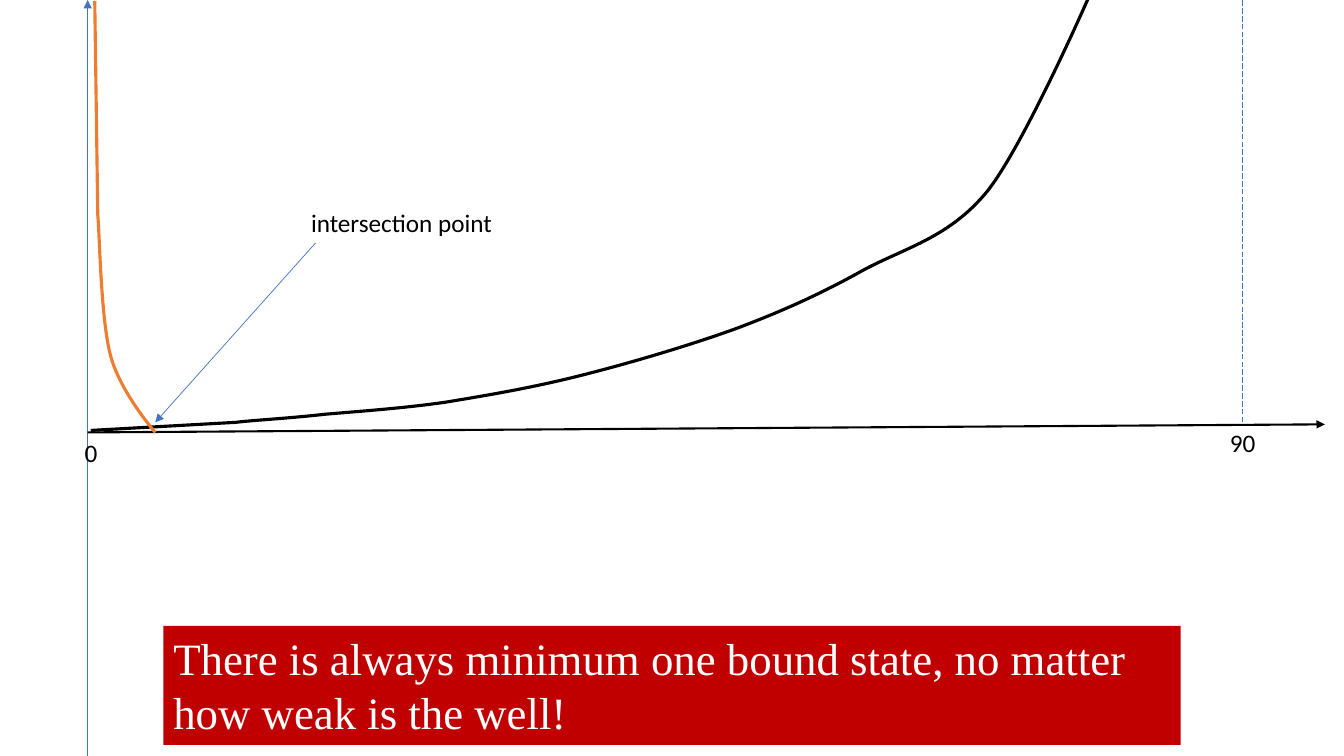
from dataclasses import dataclass
from typing import Optional

from lxml import etree
from pptx import Presentation
from pptx.dml.color import RGBColor
from pptx.enum.dml import MSO_LINE
from pptx.enum.shapes import MSO_CONNECTOR, MSO_SHAPE
from pptx.enum.text import MSO_ANCHOR, MSO_AUTO_SIZE, PP_ALIGN
from pptx.oxml.ns import qn
from pptx.util import Inches, Pt

STRAIGHT = MSO_CONNECTOR.STRAIGHT
RECTANGLE = MSO_SHAPE.RECTANGLE
LONG_DASH = MSO_LINE.LONG_DASH
FIT_SHAPE = MSO_AUTO_SIZE.SHAPE_TO_FIT_TEXT
TOP = MSO_ANCHOR.TOP
LEFT = PP_ALIGN.LEFT
COLORS = {"blue": "4472C4", "black": "000000", "orange": "ED7D31",
          "red": "C00000", "white": "FFFFFF"}
Point = tuple[float, float]


@dataclass
class Line:
    start: Point
    end: Point
    color: str = "blue"
    weight: float = 0.5
    arrow: bool = True
    dash: Optional[MSO_LINE] = None


@dataclass
class Curve:
    """A start point, then two control points and an end point per segment."""
    color: str
    points: list[Point]


@dataclass
class Label:
    text: str
    left: float
    top: float
    width: float
    height: float = 0.4
    font: str = "Calibri"
    size: int = 18
    color: str = "black"
    fill: Optional[str] = None


LINES = [
    Line((0.87, 7.5), (0.87, 0)),
    Line((0.87, 4.29), (13.14, 4.21), "black", 1.5),
    Line((12.32, 4.19), (12.32, 0), arrow=False, dash=LONG_DASH),
    Line((3.13, 2.41), (1.54, 4.19)),
]
CURVES = [
    Curve("black", [
        (0.9, 4.27), (0.9, 4.27), (2.34, 4.19), (2.34, 4.19),
        (2.49, 4.17), (2.87, 4.15), (3.22, 4.11),
        (3.57, 4.08), (4, 4.05), (4.42, 3.99),
        (4.84, 3.92), (5.26, 3.85), (5.74, 3.73),
        (6.22, 3.61), (6.83, 3.43), (7.3, 3.26),
        (7.78, 3.08), (8.17, 2.9), (8.58, 2.67),
        (9, 2.45), (9.42, 2.35), (9.79, 1.9),
        (10.15, 1.45), (10.79, -0.01), (10.79, -0.01)]),
    Curve("orange", [
        (0.94, 0.01), (0.94, 0.01), (0.97, 2.13), (0.97, 2.13),
        (0.99, 2.36), (1, 3.18), (1.1, 3.54),
        (1.2, 3.9), (1.54, 4.29), (1.54, 4.29)]),
]
LABELS = [
    Label("0", 0.74, 4.29, 0.33),
    Label("90", 12.1, 4.19, 0.46),
    Label(" intersection point", 2.93, 2.01, 2.08),
    Label("There is always minimum one bound state, no matter how weak is the well!",
          1.62, 6.21, 10.09, 1.18, "Times New Roman", 32, "white", "red"),
]


def rgb(name: str) -> RGBColor:
    return RGBColor.from_string(COLORS[name])


def set_all(target, formats: dict) -> None:
    for name, value in formats.items():
        setattr(target, name, value)


def draw_line(page, item: Line) -> None:
    ends = [Inches(value) for value in (*item.start, *item.end)]
    connector = page.shapes.add_connector(STRAIGHT, *ends)
    connector.line.color.rgb = rgb(item.color)
    set_all(connector.line, {"width": Pt(item.weight), "dash_style": item.dash})
    if item.arrow:
        etree.SubElement(connector.line._get_or_add_ln(), qn("a:tailEnd"), type="triangle")
    etree.SubElement(connector._element.spPr, qn("a:effectLst"))


def draw_curve(page, item: Curve) -> None:
    # The builder rounds to whole units, so it gets full-precision lengths
    start, *others = [(Inches(x), Inches(y)) for x, y in item.points]
    builder = page.shapes.build_freeform(*start)
    builder.add_line_segments(others, close=False)
    shape = builder.convert_to_shape()
    shape.shadow.inherit = False
    shape.fill.background()
    shape.line.color.rgb = rgb(item.color)
    shape.line.width = Pt(2.25)
    # Turn every three straight steps into one Bézier segment
    outline = next(shape._element.iter(qn("a:path")))
    steps = outline.findall(qn("a:lnTo"))
    for first in range(0, len(steps), 3):
        bezier = etree.SubElement(outline, qn("a:cubicBezTo"))
        for step in steps[first:first + 3]:
            bezier.append(step[0])
            outline.remove(step)


def draw_label(page, item: Label) -> None:
    place = [Inches(v) for v in (item.left, item.top, item.width, item.height)]
    if item.fill:
        box = page.shapes.add_shape(RECTANGLE, *place)
        box.shadow.inherit = False
        box.fill.solid()
        box.fill.fore_color.rgb = rgb(item.fill)
        box.line.fill.background()
    else:
        box = page.shapes.add_textbox(*place)
    set_all(box.text_frame, {"word_wrap": bool(item.fill), "auto_size": FIT_SHAPE,
                             "vertical_anchor": TOP})
    para = box.text_frame.paragraphs[0]
    para.alignment = LEFT
    span = para.add_run()
    span.text = item.text
    set_all(span.font, {"name": item.font, "size": Pt(item.size)})
    span.font.color.rgb = rgb(item.color)


def main() -> None:
    deck = Presentation()
    set_all(deck, {"slide_width": Inches(13.33), "slide_height": Inches(7.5)})
    page = deck.slides.add_slide(deck.slide_layouts[6])
    # Axes, asymptote and pointer
    for line in LINES:
        draw_line(page, line)
    # The two intersecting curves
    for curve in CURVES:
        draw_curve(page, curve)
    # Labels and the red conclusion banner
    for label in LABELS:
        draw_label(page, label)
    deck.save("out.pptx")


if __name__ == "__main__":
    main()
